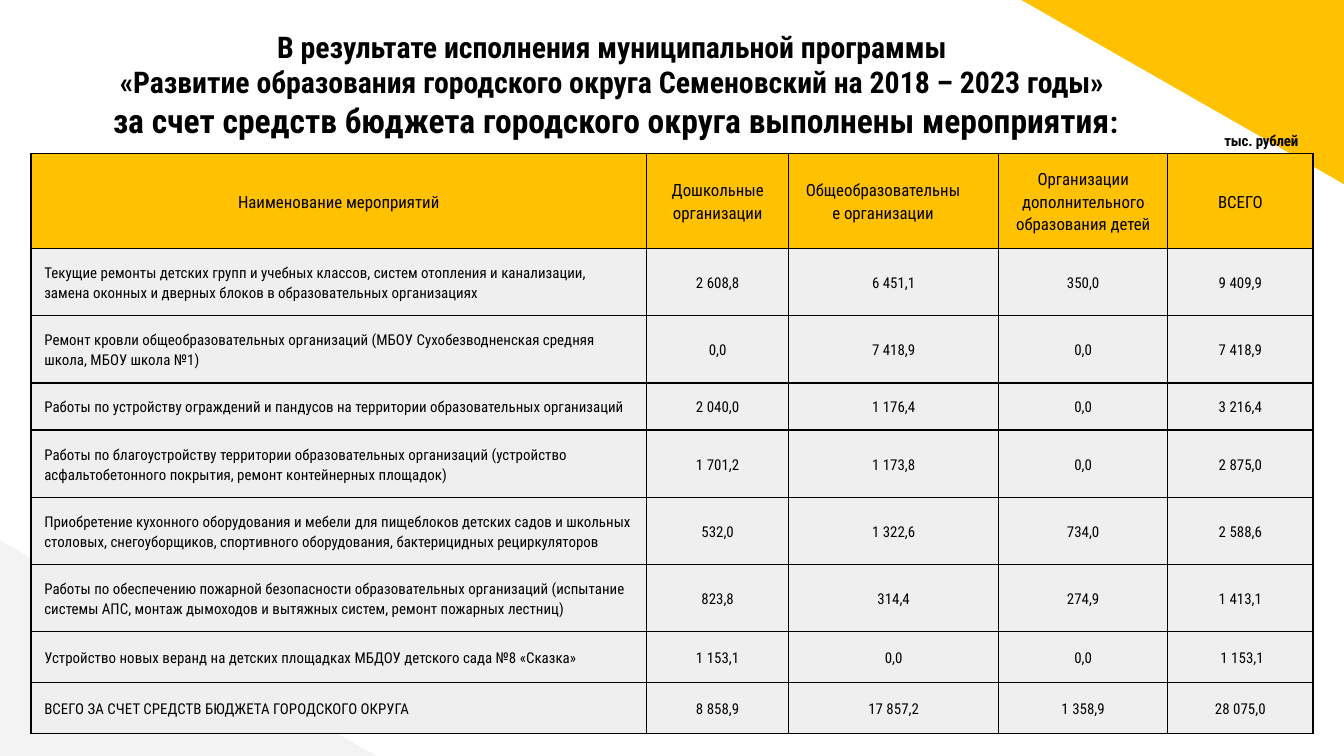
from typing import Any, NamedTuple

from lxml.etree import SubElement
from pptx import Presentation
from pptx.dml.color import RGBColor
from pptx.enum.shapes import MSO_SHAPE as Preset
from pptx.enum.text import MSO_ANCHOR as Anchor, MSO_AUTO_SIZE as AutoSize, PP_ALIGN as Align
from pptx.oxml.ns import qn
from pptx.util import Inches, Pt

COLORS = {"accent": "FFC100", "corner": "F3F3F3", "row": "EFEFEF", "ink": "000000"}
FONT = "Roboto Condensed"
MARGINS = ("margin_left", "margin_top", "margin_right", "margin_bottom")


class Corner(NamedTuple):
    left: float
    top: float
    width: float
    height: float
    rotation: int
    color: str


class Measure(NamedTuple):
    """One table row: activity, the three kinds of organisation, total, height."""
    name: str
    preschool: str
    school: str
    extra: str
    total: str
    height: float


CORNERS = [
    Corner(0, 4.02, 2.81, 1.61, 0, "corner"),
    Corner(7.6, 0, 2.4, 1.37, 180, "accent"),
]
TITLE = [
    [("В результате исполнения муниципальной программы ", 16)],
    [("«Развитие образования городского округа Семеновский на 2018 – 2023 годы» ", 16)],
    [("за счет средств бюджета городского округа выполнены мероприятия", 18), (":", 16)],
]
COLUMNS = [4.58, 1.06, 1.56, 1.26, 1.08]
ROWS = [
    Measure("Наименование мероприятий", "Дошкольные организации",
            "Общеобразовательные организации",
            "Организации дополнительного образования детей", "ВСЕГО", 0.71),
    Measure("Текущие ремонты детских групп и учебных классов, систем отопления и канализации, "
            "замена оконных и дверных блоков в образовательных организациях",
            "2 608,8", "6 451,1", "350,0", "9 409,9", 0.5),
    Measure("Ремонт кровли общеобразовательных организаций (МБОУ Сухобезводненская средняя "
            "школа, МБОУ школа №1)", "0,0", "7 418,9", "0,0", "7 418,9", 0.5),
    Measure("Работы по устройству ограждений и пандусов на территории образовательных "
            "организаций", "2 040,0", "1 176,4", "0,0", "3 216,4", 0.35),
    Measure("Работы по благоустройству территории образовательных организаций (устройство "
            "асфальтобетонного покрытия, ремонт контейнерных площадок)",
            "1 701,2", "1 173,8", "0,0", "2 875,0", 0.5),
    Measure("Приобретение кухонного оборудования и мебели для пищеблоков детских садов и "
            "школьных столовых, снегоуборщиков, спортивного оборудования, бактерицидных "
            "рециркуляторов", "532,0", "1 322,6", "734,0", "2 588,6", 0.5),
    Measure("Работы по обеспечению пожарной безопасности образовательных организаций "
            "(испытание системы АПС, монтаж дымоходов и вытяжных систем, ремонт пожарных "
            "лестниц)", "823,8", "314,4", "274,9", "1 413,1", 0.5),
    Measure("Устройство новых веранд на детских площадках МБДОУ детского сада №8 «Сказка»",
            "1 153,1", "0,0", "0,0", " 1 153,1", 0.38),
    Measure("ВСЕГО ЗА СЧЕТ СРЕДСТВ БЮДЖЕТА ГОРОДСКОГО ОКРУГА",
            "8 858,9", "17 857,2", "1 358,9", "28 075,0", 0.38),
]


def apply(target: Any, values: dict[str, Any]) -> None:
    for name, value in values.items():
        setattr(target, name, value)


def rgb(color: str) -> RGBColor:
    return RGBColor.from_string(COLORS[color])


def add_span(para: Any, text: str, size: float, bold: bool) -> Any:
    span = para.add_run()
    span.text = text
    apply(span.font, {"name": FONT, "size": Pt(size), "bold": bold})
    span.font.color.rgb = rgb("ink")
    return span


def add_corner(page: Any, corner: Corner) -> None:
    shape = page.shapes.add_shape(Preset.RIGHT_TRIANGLE, *map(Inches, corner[:4]))
    shape.rotation = corner.rotation
    shape.shadow.inherit = False
    shape.fill.solid()
    shape.fill.fore_color.rgb = rgb(corner.color)
    shape.line.fill.background()


def format_title(page: Any) -> None:
    title = page.shapes.title
    page.shapes._spTree.append(title._element)  # in front of the corners
    apply(title, {"left": Inches(0.15), "top": Inches(0.11),
                  "width": Inches(8.86), "height": Inches(0.95)})
    frame = title.text_frame
    apply(frame, {"word_wrap": True, "auto_size": AutoSize.NONE, "vertical_anchor": Anchor.TOP})
    apply(frame, dict.fromkeys(MARGINS, Inches(0.1)))
    para = frame.paragraphs[0]
    apply(para, {"alignment": Align.CENTER, "line_spacing": 1.0, "space_before": Pt(0)})
    for index, line in enumerate(TITLE):
        if index:
            para.add_line_break()
        for text, size in line:
            add_span(para, text, size, True)


def add_borders(cell: Any) -> None:
    props = cell._tc.get_or_add_tcPr()
    for side in ("a:lnL", "a:lnR", "a:lnT", "a:lnB"):
        line = SubElement(props, qn(side), w=str(Pt(0.75)))
        fill = SubElement(line, qn("a:solidFill"))
        SubElement(fill, qn("a:srgbClr"), val=COLORS["ink"])


def fill_cell(cell: Any, text: str, header: bool, centered: bool) -> None:
    add_borders(cell)  # borders come before the fill in the cell properties
    cell.fill.solid()
    cell.fill.fore_color.rgb = rgb("accent" if header else "row")
    cell.vertical_anchor = Anchor.MIDDLE
    apply(cell, dict.fromkeys(MARGINS, Inches(0.1)))
    para = cell.text_frame.paragraphs[0]
    apply(para, {"alignment": Align.CENTER if centered else Align.LEFT, "line_spacing": 1.15})
    add_span(para, text, 9 if header else 8, False)


def add_measures(page: Any) -> None:
    frame = page.shapes.add_table(len(ROWS), len(COLUMNS), Inches(0.23), Inches(1.14),
                                  Inches(sum(COLUMNS)), Inches(sum(row.height for row in ROWS)))
    table = frame.table
    apply(table, {"first_row": False, "horz_banding": False})
    for column, width in zip(table.columns, COLUMNS):
        column.width = Inches(width)
    for r, measure in enumerate(ROWS):
        table.rows[r].height = Inches(measure.height)
        for c, text in enumerate(measure[:-1]):
            fill_cell(table.cell(r, c), text, header=r == 0, centered=r == 0 or c > 0)
    # The schools heading is indented on the right
    school = table.cell(0, 2).text_frame.paragraphs[0]
    school._p.get_or_add_pPr().set("marR", str(Inches(0.16)))


def add_unit(page: Any) -> None:
    box = page.shapes.add_textbox(Inches(9.1), Inches(0.97), Inches(1.09), Inches(0.15))
    frame = box.text_frame
    frame.word_wrap = True
    apply(frame, dict.fromkeys(MARGINS, 0))
    frame.margin_top = Inches(0.01)
    para = frame.paragraphs[0]
    para._p.get_or_add_pPr().set("marL", str(Inches(0.01)))
    span = add_span(para, "тыс. рублей", 8, True)
    span._r.get_or_add_rPr().set("spc", "-10")


def main() -> None:
    deck = Presentation()
    width = Inches(10)
    apply(deck, {"slide_width": width, "slide_height": width * 9 // 16})
    page = deck.slides.add_slide(deck.slide_layouts[5])
    for corner in CORNERS:
        add_corner(page, corner)
    format_title(page)
    add_measures(page)
    add_unit(page)
    deck.save("out.pptx")


if __name__ == "__main__":
    main()
